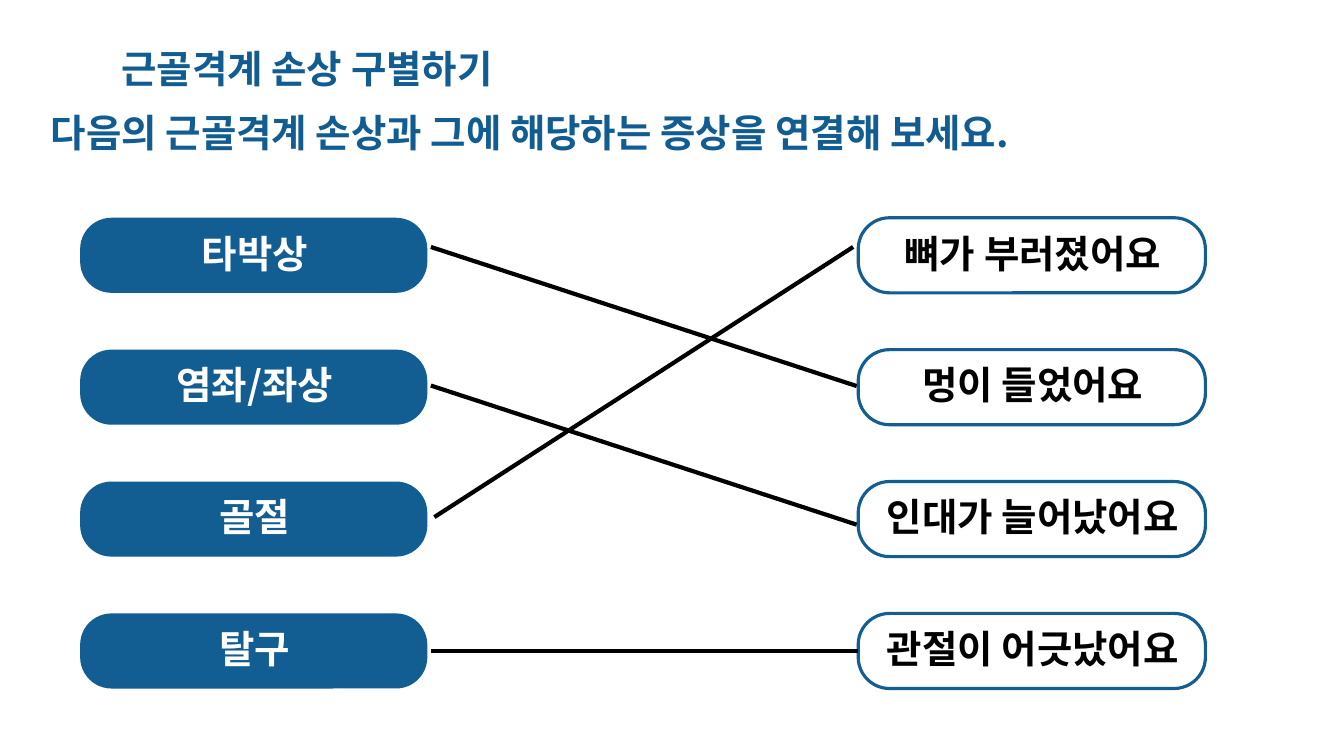
from lxml import etree
from pptx import Presentation
from pptx.dml.color import RGBColor
from pptx.enum.shapes import MSO_CONNECTOR, MSO_SHAPE
from pptx.enum.text import MSO_AUTO_SIZE, PP_ALIGN
from pptx.oxml.ns import qn
from pptx.util import Inches, Pt

ROUNDED = MSO_SHAPE.ROUNDED_RECTANGLE
STRAIGHT = MSO_CONNECTOR.STRAIGHT
CENTER = PP_ALIGN.CENTER
GROW = MSO_AUTO_SIZE.SHAPE_TO_FIT_TEXT

FONT, FONT_SIZE = "Noto Sans CJK KR", 55
TITLE_BLUE, PILL_BLUE, WHITE, BLACK = "115C91", "125D91", "FFFFFF", "000000"

# Content
HEADINGS = [
    ("근골격계 손상 구별하기", 2.31, 0.95, 7.89),
    ("다음의 근골격계 손상과 그에 해당하는 증상을 연결해 보세요.", 0.91, 2.22, 20.09),
]
INJURIES = ["타박상", "염좌/좌상", "골절", "탈구"]
SYMPTOMS = ["뼈가 부러졌어요", "멍이 들었어요", "인대가 늘어났어요", "관절이 어긋났어요"]
MATCHES = [
    ((8.55, 4.9), (17, 7.66)),
    ((8.55, 7.65), (17, 10.41)),
    ((8.62, 10.26), (16.93, 4.9)),
    ((8.55, 12.92), (17.03, 12.92)),
]

# Layout in inches
INJURY_LEFT, SYMPTOM_LEFT = 1.59, 17.03
FIRST_TOP, ROW_STEP = 4.32, 2.617
PILL_WIDTH, PILL_HEIGHT = 6.89, 1.49
LABEL_WIDTH, LABEL_HEIGHT, LABEL_INSET = 6.99, 1.14, 0.06


def rgb(value):
    return RGBColor.from_string(value)


def add_text(shapes, text, left, top, width, height, color):
    box = shapes.add_textbox(Inches(left), Inches(top), Inches(width), Inches(height))
    paragraph = box.text_frame.paragraphs[0]
    paragraph.text = text
    run = paragraph.runs[0]
    run.font.name = FONT
    run.font.size = Pt(FONT_SIZE)
    run.font.bold = True
    run.font.color.rgb = rgb(color)
    # Korean glyphs take the East Asian typeface
    etree.SubElement(run.font._element, qn("a:ea"), typeface=FONT)
    return box.text_frame


def add_pill(slide, text, left, top, fill, text_color, outline=None):
    group = slide.shapes.add_group_shape()
    pill = group.shapes.add_shape(
        ROUNDED, Inches(left), Inches(top), Inches(PILL_WIDTH), Inches(PILL_HEIGHT))
    pill.adjustments[0] = 0.417
    pill.shadow.inherit = False
    pill.fill.solid()
    pill.fill.fore_color.rgb = rgb(fill)
    if outline:
        pill.line.color.rgb = rgb(outline)
        pill.line.width = Pt(4.5)
    else:
        pill.line.fill.background()

    label_top = top + (PILL_HEIGHT - LABEL_HEIGHT) / 2
    frame = add_text(group.shapes, text, left - 0.03, label_top,
                     LABEL_WIDTH, LABEL_HEIGHT, text_color)
    frame.word_wrap = True
    frame.margin_left = frame.margin_right = Inches(LABEL_INSET)
    frame.margin_top = frame.margin_bottom = Inches(LABEL_INSET)
    frame.paragraphs[0].alignment = CENTER


def add_match(slide, start, end):
    points = [Inches(value) for value in (*start, *end)]
    connector = slide.shapes.add_connector(STRAIGHT, *points)
    connector.line.color.rgb = rgb(BLACK)
    connector.line.width = Pt(6)
    etree.SubElement(connector._element.spPr, qn("a:effectLst"))


def main():
    presentation = Presentation()
    presentation.slide_width = Inches(26.67)
    presentation.slide_height = Inches(15)
    slide = presentation.slides.add_slide(presentation.slide_layouts[6])

    # Headings
    for text, left, top, width in HEADINGS:
        frame = add_text(slide.shapes, text, left, top, width, 0.93, TITLE_BLUE)
        frame.word_wrap = False
        frame.auto_size = GROW
        frame.paragraphs[0].line_spacing = 0.9

    # Injuries on the left, symptoms on the right
    for row, (injury, symptom) in enumerate(zip(INJURIES, SYMPTOMS)):
        top = FIRST_TOP + row * ROW_STEP
        add_pill(slide, injury, INJURY_LEFT, top, PILL_BLUE, WHITE)
        add_pill(slide, symptom, SYMPTOM_LEFT, top, WHITE, BLACK, outline=PILL_BLUE)

    # Matching lines
    for start, end in MATCHES:
        add_match(slide, start, end)

    presentation.save("out.pptx")


if __name__ == "__main__":
    main()
